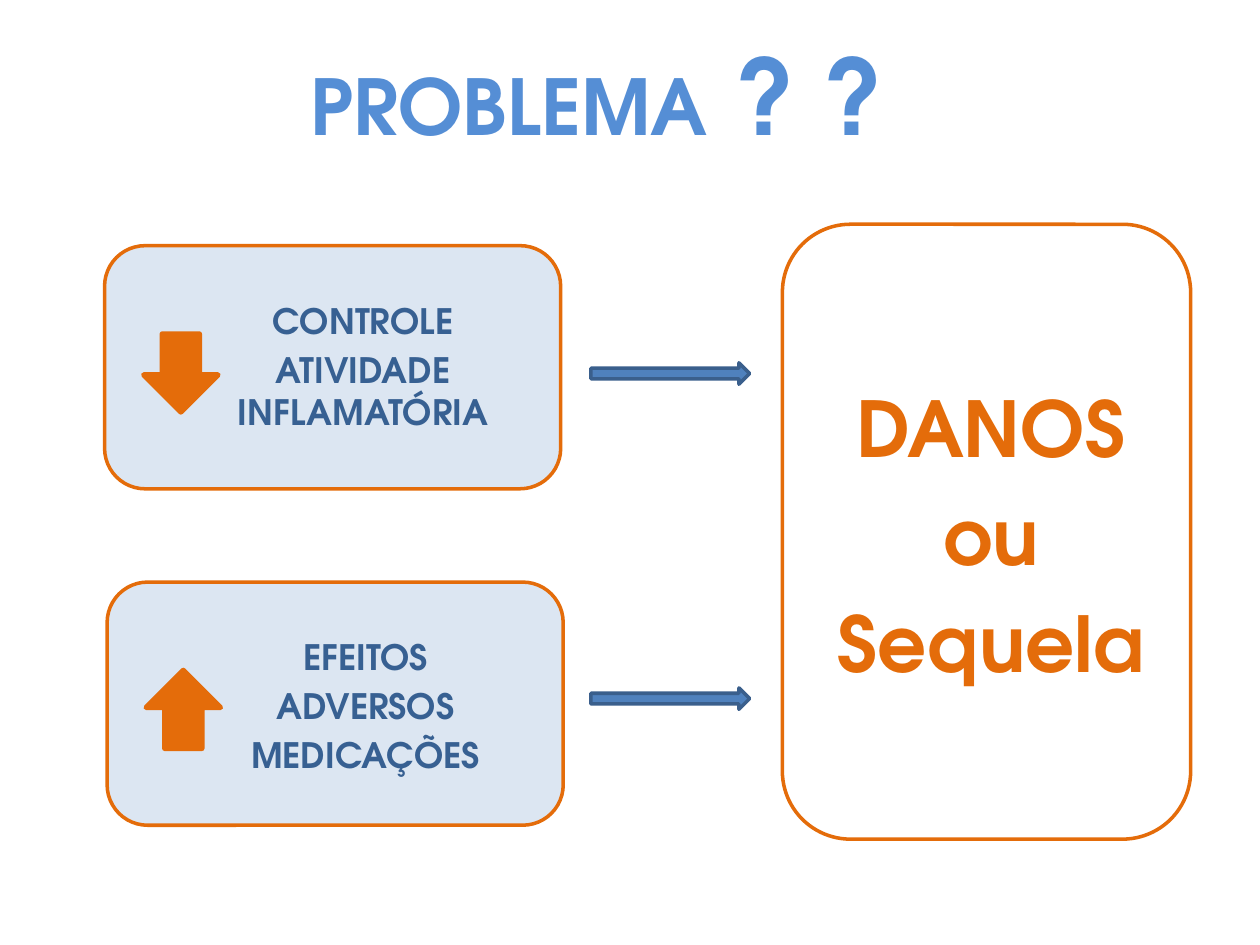
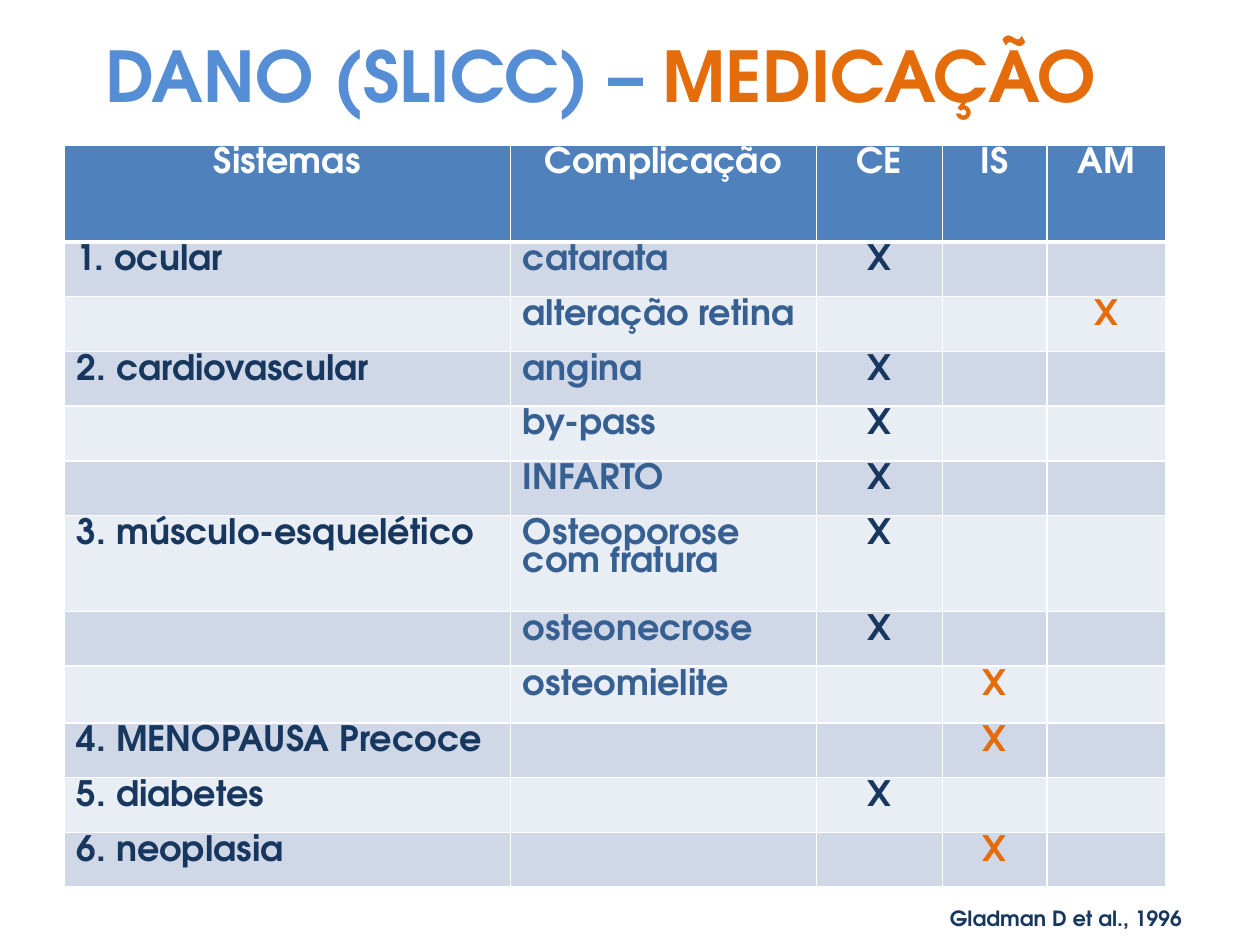
from lxml import etree
from pptx import Presentation
from pptx import util as u
from pptx.dml.color import RGBColor
from pptx.enum import shapes, text
from pptx.oxml.ns import qn

COLUMNS, ROWS = 100, 75
FONT = "TeX Gyre Adventor"
WHITE, ORANGE, SKY = "FFFFFF", "E46C0A", "558ED5"
BLUE, NAVY, STEEL, OUTLINE = "376092", "17375E", "4F81BD", "3A5F8C"
PALE, BANDS = "DCE6F2", ("D0D8E8", "E9EDF4")
CENTER, LEFT = text.PP_ALIGN.CENTER, text.PP_ALIGN.LEFT
SHAPE = shapes.MSO_SHAPE


def rgb(value):
    return RGBColor.from_string(value)


class Deck:
    """Holds the shared style and the current slide; lengths are grid columns and rows."""

    def __init__(self):
        self.presentation = Presentation()
        self.presentation.slide_width = u.Inches(10)
        self.presentation.slide_height = u.Inches(7.5)
        self.slide = None

    def new_slide(self):
        self.slide = self.presentation.slides.add_slide(self.presentation.slide_layouts[6])

    def across(self, columns):
        return round(self.presentation.slide_width * columns / COLUMNS)

    def down(self, rows):
        return round(self.presentation.slide_height * rows / ROWS)

    def box(self, left, top, width, height):
        return self.across(left), self.down(top), self.across(width), self.down(height)

    def style(self, font, size, color):
        font.name, font.size, font.bold = FONT, u.Pt(size), True
        font.color.rgb = rgb(color)

    def shape(self, kind, at, line, width, fill=None):
        shape = self.slide.shapes.add_shape(kind, *self.box(*at))
        shape.shadow.inherit = False
        if fill:
            shape.fill.solid()
            shape.fill.fore_color.rgb = rgb(fill)
        else:
            shape.fill.background()
        shape.line.color.rgb = rgb(line)
        shape.line.width = u.Pt(width)

    def text_frame(self, at, indent=0):
        frame = self.slide.shapes.add_textbox(*self.box(*at)).text_frame
        frame.word_wrap = True
        frame.margin_left += self.across(indent)
        return frame

    def lines(self, at, lines, size, color, align=CENTER, indent=1.2):
        frame = self.text_frame(at, indent)
        for number, line in enumerate(lines):
            paragraph = frame.add_paragraph() if number else frame.paragraphs[0]
            paragraph.text, paragraph.alignment = line, align
            paragraph.space_before = u.Pt(0.2 * size if number else 0)
            self.style(paragraph.font, size, color)

    def title(self, at, runs, indent=0):
        """Write one centred line from (words, size, color) runs."""
        paragraph = self.text_frame(at, indent).paragraphs[0]
        paragraph.alignment = CENTER
        for words, size, color in runs:
            run = paragraph.add_run()
            run.text = words
            self.style(run.font, size, color)

    def cell(self, cell, words, fill, color, align, edges):
        cell.fill.solid()
        cell.fill.fore_color.rgb = rgb(fill)
        paragraph = cell.text_frame.paragraphs[0]
        paragraph.text, paragraph.alignment = words, align
        paragraph.line_spacing = 0.87
        self.style(paragraph.font, 20, color)
        properties = cell._tc.get_or_add_tcPr()
        for position, (side, width) in enumerate(edges.items()):
            border = etree.Element(qn(f"a:ln{side}"), w=str(u.Pt(width)))
            solid = etree.SubElement(border, qn("a:solidFill"))
            etree.SubElement(solid, qn("a:srgbClr"), val=WHITE)
            properties.insert(position, border)

    def table(self, left, top, widths, heights, header, records):
        """Draw records of (system, complication, heading of the marked column)."""
        frame = self.slide.shapes.add_table(
            len(heights), len(widths), *self.box(left, top, sum(widths), sum(heights)))
        table = frame.table
        for column, width in zip(table.columns, widths):
            column.width = self.across(width)
        for row, height in zip(table.rows, heights):
            row.height = self.down(height)
        for index, heading in enumerate(header):
            self.cell(table.cell(0, index), heading, STEEL, WHITE, CENTER,
                      {"L": 1, "R": 1, "T": 1, "B": 3})
        for number, (system, complication, marked) in enumerate(records, 1):
            marks = ["X" if heading == marked else "" for heading in header[2:]]
            mark_color = NAVY if marked == "CE" else ORANGE
            colors = [NAVY, BLUE] + [mark_color] * len(marks)
            for index, words in enumerate([system, complication, *marks]):
                self.cell(table.cell(number, index), words, BANDS[(number - 1) % 2],
                          colors[index], CENTER if index > 1 else LEFT,
                          {"L": 1, "R": 1, "T": 3 if number == 1 else 1, "B": 1})


def problem_slide(deck):
    deck.new_slide()
    deck.title((2.7, 1.9, 88.2, 10), [("PROBLEMA", 44, SKY), (" ? ?", 60, SKY)], indent=1.2)
    causes = [
        (8.3, 19.5, SHAPE.DOWN_ARROW, 28.8, ["CONTROLE", "ATIVIDADE INFLAMATÓRIA"]),
        (8.5, 46.2, SHAPE.UP_ARROW, 54.6, ["EFEITOS", "ADVERSOS", "MEDICAÇÕES"]),
    ]
    for left, top, trend, arrow_top, words in causes:
        deck.shape(SHAPE.ROUNDED_RECTANGLE, (left, top, 36.2, 19.3), ORANGE, 2, PALE)
        deck.shape(trend, (left + 3.1, top + 7, 5.9, 6.2), ORANGE, 3, ORANGE)
        deck.lines((left + 2.3, top + 3.75, 35.2, 12), words, 20, BLUE)
        deck.shape(SHAPE.RIGHT_ARROW, (46.9, arrow_top, 12.6, 1.7), OUTLINE, 2, STEEL)
    deck.shape(SHAPE.ROUNDED_RECTANGLE, (62.1, 17.8, 32.4, 48.8), ORANGE, 2)
    deck.lines((63.5, 29.7, 29.1, 27), ["DANOS", "ou", "Sequela"], 44, ORANGE)


def damage_slide(deck):
    deck.new_slide()
    normal, tall = 4.35, 7.6
    deck.table(
        5.1, 11.5, [35.4, 24.3, 10, 8.3, 9.4],
        [7.7] + [normal] * 5 + [tall, normal, 4.5] + [normal] * 3,
        ["Sistemas", "Complicação", "CE", "IS", "AM"],
        [
            ("1. ocular", "catarata", "CE"),
            ("", "alteração retina", "AM"),
            ("2. cardiovascular", "angina", "CE"),
            ("", "by-pass", "CE"),
            ("", "INFARTO", "CE"),
            ("3. músculo-esquelético", "Osteoporose com fratura", "CE"),
            ("", "osteonecrose", "CE"),
            ("", "osteomielite", "IS"),
            ("4. MENOPAUSA Precoce", "", "IS"),
            ("5. diabetes", "", "CE"),
            ("6. neoplasia", "", "IS"),
        ])
    deck.lines((74.4, 71.4, 25.2, 3), ["Gladman D et al., 1996"], 12, NAVY, LEFT, indent=0)
    deck.title((3.5, 2.1, 88.4, 8), [("DANO (SLICC) – ", 40, SKY), ("MEDICAÇÃO", 40, ORANGE)])


def main():
    deck = Deck()
    problem_slide(deck)
    damage_slide(deck)
    deck.presentation.save("out.pptx")


if __name__ == "__main__":
    main()
